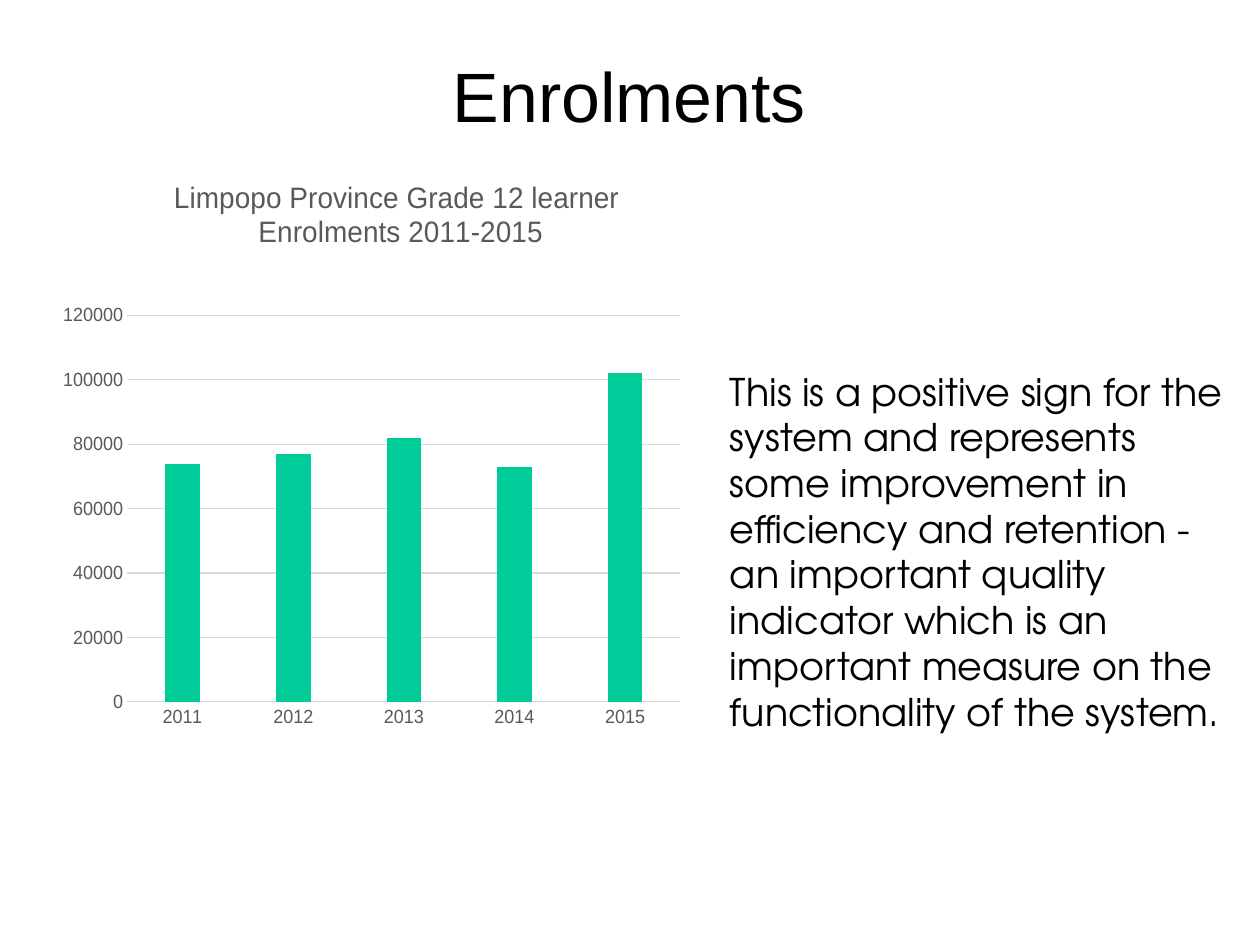
from dataclasses import dataclass

from lxml import etree
from pptx import Presentation
from pptx.chart.data import CategoryChartData
from pptx.dml.color import RGBColor
from pptx.enum.chart import XL_CHART_TYPE, XL_TICK_MARK
from pptx.enum.text import MSO_ANCHOR, MSO_AUTO_SIZE, PP_ALIGN
from pptx.util import Pt

COLUMNS = XL_CHART_TYPE.COLUMN_CLUSTERED
NO_TICK = XL_TICK_MARK.NONE
MIDDLE, TOP = MSO_ANCHOR.MIDDLE, MSO_ANCHOR.TOP
CENTER, LEFT = PP_ALIGN.CENTER, PP_ALIGN.LEFT
GROW, FIXED = MSO_AUTO_SIZE.SHAPE_TO_FIT_TEXT, MSO_AUTO_SIZE.NONE
CHART_NS = "http://schemas.openxmlformats.org/drawingml/2006/chart"
EMU_PER_PX = 8000  # a 28 by 21 cm slide is 1260 by 945 px


@dataclass(frozen=True)
class Theme:
    heading_font: str = "Arial"
    body_font: str = "TeX Gyre Adventor"
    ink: str = "000000"
    muted: str = "595959"
    grid: str = "D9D9D9"
    bar: str = "00CC99"
    heading_size: int = 44
    body_size: int = 24
    chart_title_size: float = 18.6
    axis_size: int = 12
    chart_size: int = 10
    hairline: float = 0.75


def px(length):
    return length * EMU_PER_PX


def set_font(font, name, size, color):
    font.name, font.size, font.bold = name, Pt(size), False
    font.color.rgb = RGBColor.from_string(color)


def place(parent, **fractions):
    """Give a chart title or plot area a manual layout."""
    def tag(name):
        return f"{{{CHART_NS}}}{name}"

    for old in parent.findall(tag("layout")):
        parent.remove(old)
    layout = etree.Element(tag("layout"))
    manual = etree.SubElement(layout, tag("manualLayout"))
    settings = {"xMode": "edge", "yMode": "edge", **fractions}
    if "w" in fractions:
        settings = {"layoutTarget": "inner", **settings}
    for name, value in settings.items():
        etree.SubElement(manual, tag(name)).set("val", str(value))
    text = parent.find(tag("tx"))
    parent.insert(0 if text is None else parent.index(text) + 1, layout)


class SlideBuilder:
    def __init__(self, slide, theme):
        self.slide, self.theme = slide, theme

    def text(self, box, wording, font, size, align=LEFT, anchor=TOP,
             insets=(11, 6), indent=0, spacing=None, fit=FIXED):
        frame = self.slide.shapes.add_textbox(*map(px, box)).text_frame
        frame.word_wrap, frame.auto_size = True, fit
        frame.vertical_anchor = anchor
        frame.margin_left = frame.margin_right = px(insets[0])
        frame.margin_top = frame.margin_bottom = px(insets[1])
        frame.text = wording
        paragraph = frame.paragraphs[0]
        paragraph.alignment, paragraph.line_spacing = align, spacing
        properties = paragraph._p.get_or_add_pPr()
        properties.set("marL", str(px(indent)))
        properties.set("indent", "0")
        set_font(paragraph.runs[0].font, font, size, self.theme.ink)

    def column_chart(self, box, title_lines, values_by_year, top, step):
        theme = self.theme
        data = CategoryChartData()
        data.categories = list(values_by_year)
        data.add_series("Series 1", list(values_by_year.values()))
        chart = self.slide.shapes.add_chart(COLUMNS, *map(px, box), data).chart
        chart.has_legend = False
        set_font(chart.font, theme.heading_font, theme.chart_size, theme.ink)

        # Chart title
        chart.has_title = True
        heading = chart.chart_title.text_frame
        heading.text = "\n".join(title_lines)
        for paragraph in heading.paragraphs:
            paragraph.alignment = CENTER
            set_font(paragraph.runs[0].font, theme.heading_font,
                     theme.chart_title_size, theme.muted)
        chart.chart_title.include_in_layout = False
        place(chart.chart_title._element, x=0.12, y=0.03)
        place(chart._chartSpace.chart.plotArea,
              x=0.049, y=0.266, w=0.909, h=0.653)

        # Columns
        plot = chart.plots[0]
        plot.gap_width, plot.overlap = 219, -27
        plot.vary_by_categories = False
        fill = plot.series[0].format.fill
        fill.solid()
        fill.fore_color.rgb = RGBColor.from_string(theme.bar)

        # Axes and gridlines
        years, learners = chart.category_axis, chart.value_axis
        for axis in (years, learners):
            axis.major_tick_mark = axis.minor_tick_mark = NO_TICK
            set_font(axis.tick_labels.font, theme.heading_font,
                     theme.axis_size, theme.muted)
        learners.minimum_scale, learners.maximum_scale = 0, top
        learners.major_unit = step
        learners.has_major_gridlines = True
        learners.format.line.fill.background()
        for rule in (years.format.line, learners.major_gridlines.format.line):
            rule.color.rgb = RGBColor.from_string(theme.grid)
            rule.width = Pt(theme.hairline)


def main():
    deck = Presentation()
    deck.slide_width, deck.slide_height = px(1260), px(945)
    theme = Theme()
    page = SlideBuilder(deck.slides.add_slide(deck.slide_layouts[6]), theme)

    # Heading
    page.text((63, 41, 1133, 117), "Enrolments", theme.heading_font,
              theme.heading_size, align=CENTER, anchor=MIDDLE,
              insets=(0, 0), spacing=0.93)

    # Enrolments by year
    page.column_chart(
        (63, 158, 643, 592),
        ["Limpopo Province Grade 12 learner ", "Enrolments 2011-2015"],
        {"2011": 74000, "2012": 77000, "2013": 82000,
         "2014": 73000, "2015": 102000},
        top=120000, step=20000)

    # Interpretation
    page.text((706, 362, 534, 381),
              "This is a positive sign for the system and represents some "
              "improvement in efficiency and retention - an important quality "
              "indicator which is an important measure on the functionality "
              "of the system.",
              theme.body_font, theme.body_size, indent=13, fit=GROW)

    deck.save("out.pptx")


if __name__ == "__main__":
    main()
